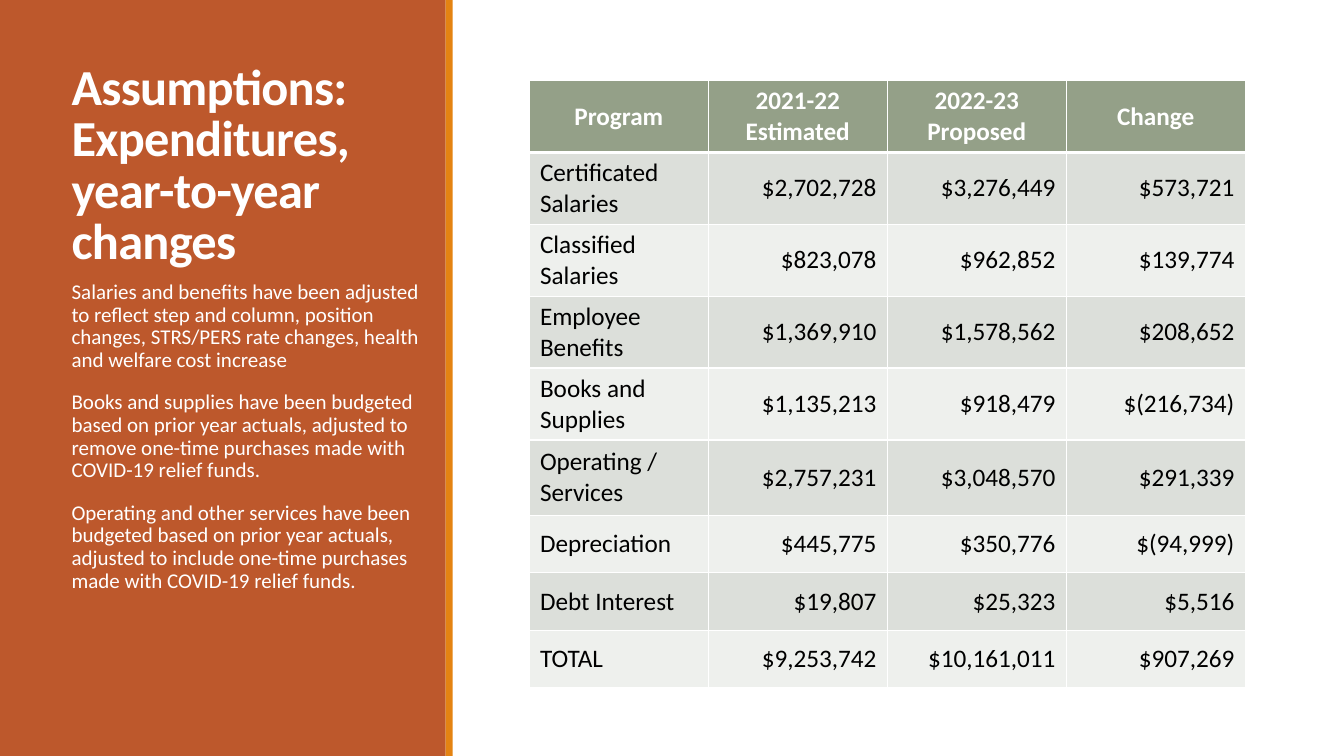
from copy import deepcopy

from lxml import etree
from pptx import Presentation
from pptx.dml.color import RGBColor
from pptx.enum.shapes import MSO_SHAPE
from pptx.enum.text import MSO_ANCHOR, MSO_AUTO_SIZE, PP_ALIGN
from pptx.oxml.ns import qn
from pptx.util import Cm, Pt

RECTANGLE = MSO_SHAPE.RECTANGLE
LEFT, CENTER, RIGHT = PP_ALIGN.LEFT, PP_ALIGN.CENTER, PP_ALIGN.RIGHT
TOP, MIDDLE, BOTTOM = MSO_ANCHOR.TOP, MSO_ANCHOR.MIDDLE, MSO_ANCHOR.BOTTOM
NO_AUTOFIT = MSO_AUTO_SIZE.NONE

RUST = RGBColor(0xBD, 0x58, 0x2C)
ORANGE = RGBColor(0xE4, 0x83, 0x12)
SAGE = RGBColor(0x94, 0xA0, 0x88)
BAND_DARK = RGBColor(0xDC, 0xDF, 0xDA)
BAND_LIGHT = RGBColor(0xEE, 0xF0, 0xED)
WHITE = RGBColor(0xFF, 0xFF, 0xFF)
BLACK = RGBColor(0, 0, 0)

FONT = "Calibri"
SLIDE_WIDTH, SLIDE_HEIGHT = Cm(33.87), Cm(19.05)
ONE_LINE_ROW, TWO_LINE_ROW, TALL_ROW = Cm(1.45), Cm(1.8), Cm(1.9)

TITLE = "Assumptions: Expenditures, \vyear-to-year changes"
ASSUMPTIONS = [
    "Salaries and benefits have been adjusted to reflect step and column, position "
    "changes, STRS/PERS rate changes, health and welfare cost increase",
    "Books and supplies have been budgeted based on prior year actuals, adjusted to "
    "remove one-time purchases made with COVID-19 relief funds.",
    "Operating and other services have been budgeted based on prior year actuals, "
    "adjusted to include one-time purchases made with COVID-19 relief funds.",
]
HEADINGS = ("Program", "2021-22 Estimated", "2022-23 Proposed", "Change")
EXPENDITURES = [
    (TWO_LINE_ROW, "Certificated Salaries", "$2,702,728", "$3,276,449", "$573,721"),
    (TWO_LINE_ROW, "Classified Salaries", "$823,078", "$962,852", "$139,774"),
    (TWO_LINE_ROW, "Employee Benefits", "$1,369,910", "$1,578,562", "$208,652"),
    (TWO_LINE_ROW, "Books and Supplies", "$1,135,213", "$918,479", "$(216,734)"),
    (TALL_ROW, "Operating / Services", "$2,757,231", "$3,048,570", "$291,339"),
    (ONE_LINE_ROW, "Depreciation", "$445,775", "$350,776", "$(94,999)"),
    (ONE_LINE_ROW, "Debt Interest", "$19,807", "$25,323", "$5,516"),
    (ONE_LINE_ROW, "TOTAL", "$9,253,742", "$10,161,011", "$907,269"),
]


def write_text(paragraph, text, size=18, color=WHITE, bold=False, align=LEFT,
               line_spacing=1.0, before=0, after=0, tracking=None):
    """Fill a paragraph; a vertical tab in the text becomes a line break."""
    paragraph.text = text
    paragraph.alignment = align
    paragraph.line_spacing = line_spacing
    paragraph.space_before, paragraph.space_after = Pt(before), Pt(after)
    for run in paragraph.runs:
        run.font.name, run.font.size = FONT, Pt(size)
        run.font.bold, run.font.color.rgb = bold, color
        if tracking is not None:
            run.font._element.set("spc", str(round(tracking * 100)))
    for line_break in paragraph._p.findall(qn("a:br")):
        line_break.append(deepcopy(paragraph.runs[0].font._element))


def place_placeholder(placeholder, left, top, width, height, anchor):
    placeholder.left, placeholder.top = left, top
    placeholder.width, placeholder.height = width, height
    frame = placeholder.text_frame
    frame.word_wrap, frame.auto_size = True, NO_AUTOFIT
    frame.vertical_anchor = anchor
    return frame


def add_panel(slide, depth, left, width, height, color):
    """Add a full-height band at the given depth, behind the placeholders."""
    panel = slide.shapes.add_shape(RECTANGLE, left, 0, width, height)
    panel.shadow.inherit = False
    panel.fill.solid()
    panel.fill.fore_color.rgb = color
    panel.line.fill.background()
    panel.element.getparent().insert(2 + depth, panel.element)


def remove_bullet(paragraph):
    properties = paragraph._p.get_or_add_pPr()
    properties.set("marL", "0")
    properties.set("indent", "0")
    etree.SubElement(properties, qn("a:buNone"))


def build_sidebar(slide, left, width, height):
    stripe = Cm(0.18)
    add_panel(slide, 0, left, width - stripe, height, RUST)
    add_panel(slide, 1, left + width - stripe, stripe, height, ORANGE)

    text_left, text_width = left + Cm(1.55), width - Cm(1.88)
    body_top = Cm(6.96)
    title = place_placeholder(slide.shapes.title, text_left, Cm(1.6),
                              text_width, Cm(5.33), BOTTOM)
    write_text(title.paragraphs[0], TITLE, size=36, bold=True,
               line_spacing=0.85, tracking=-0.5)

    body = place_placeholder(slide.placeholders[1], text_left, body_top,
                             text_width, height - body_top, TOP)
    for index, assumption in enumerate(ASSUMPTIONS):
        paragraph = body.add_paragraph() if index else body.paragraphs[0]
        remove_bullet(paragraph)
        write_text(paragraph, assumption, size=15, line_spacing=0.9,
                   before=12 if index else 0, after=2)


def set_borders(cell, bottom):
    """Draw white cell borders; bottom is the width of the lower one in points."""
    properties = cell._tc.get_or_add_tcPr()
    for side, points in (("L", 1), ("R", 1), ("T", 1), ("B", bottom)):
        line = etree.SubElement(properties, qn(f"a:ln{side}"), w=str(Pt(points)))
        fill = etree.SubElement(line, qn("a:solidFill"))
        etree.SubElement(fill, qn("a:srgbClr"), val=str(WHITE))


def fill_cell(cell, text, background, border_bottom=1, **text_format):
    cell.margin_left = cell.margin_right = Cm(0.27)
    cell.margin_top = cell.margin_bottom = Cm(0.13)
    cell.vertical_anchor = MIDDLE
    set_borders(cell, border_bottom)
    cell.fill.solid()
    cell.fill.fore_color.rgb = background
    write_text(cell.text_frame.paragraphs[0], text, **text_format)


def build_expenditure_table(slide, left, top, width):
    heights = [TWO_LINE_ROW] + [row[0] for row in EXPENDITURES]
    table = slide.shapes.add_table(len(heights), len(HEADINGS), left, top,
                                   width, sum(heights)).table
    for row, height in zip(table.rows, heights):
        row.height = height
    for column, heading in enumerate(HEADINGS):
        table.columns[column].width = width // len(HEADINGS)
        fill_cell(table.cell(0, column), heading, SAGE, border_bottom=3,
                  bold=True, align=CENTER)
    for row, (_, *entries) in enumerate(EXPENDITURES, start=1):
        band = BAND_DARK if row % 2 else BAND_LIGHT
        for column, entry in enumerate(entries):
            fill_cell(table.cell(row, column), entry, band,
                      border_bottom=1, color=BLACK,
                      align=RIGHT if column else LEFT)
    for column in range(len(HEADINGS)):
        top_line = table.cell(1, column)._tc.tcPr.find(qn("a:lnT"))
        top_line.set("w", str(Pt(3)))


def main():
    presentation = Presentation()
    presentation.slide_width, presentation.slide_height = SLIDE_WIDTH, SLIDE_HEIGHT
    slide = presentation.slides.add_slide(presentation.slide_layouts[1])
    build_sidebar(slide, 0, Cm(11.41), SLIDE_HEIGHT)
    build_expenditure_table(slide, Cm(13.34), Cm(2.03), Cm(18.04))
    presentation.save("out.pptx")


if __name__ == "__main__":
    main()
